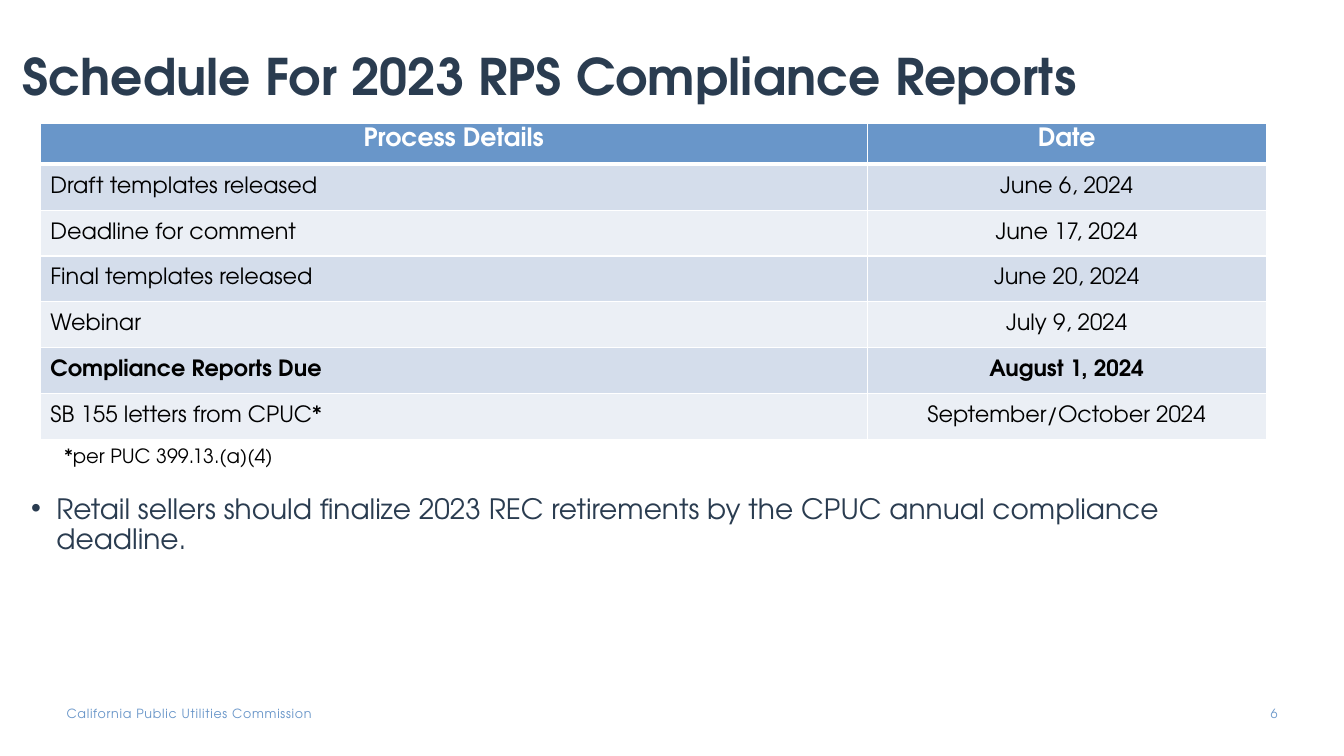
"""Build the slide with the schedule for the 2023 RPS compliance reports."""
from dataclasses import dataclass

from lxml.etree import SubElement
from pptx import Presentation
from pptx.dml.color import RGBColor
from pptx.enum.text import MSO_ANCHOR as Anchor, PP_ALIGN as Align
from pptx.oxml import parse_xml
from pptx.oxml.ns import nsdecls, qn
from pptx.util import Emu, Pt

EMU_PER_PX = 9144
FONT = "TeX Gyre Adventor"
COLORS = {
    "navy": "2A3C50",
    "blue": "6996C9",
    "band": "D4DDEB",
    "pale": "EBEFF5",
    "white": "FFFFFF",
    "black": "000000",
}


@dataclass(frozen=True)
class Style:
    size: int
    color: str
    bold: bool = False
    align: Align = Align.LEFT
    spacing: float = 1.0
    tracking: int = 0


@dataclass(frozen=True)
class TextItem:
    text: str
    left: int
    top: int
    width: int
    height: int
    style: Style
    insets: tuple[int, int, int, int] = (0, 0, 0, 0)
    anchor: Anchor = Anchor.TOP
    wrap: bool = True
    bullet: bool = False


@dataclass(frozen=True)
class Step:
    detail: str
    date: str
    bold: bool = False


BLOCK_INSETS = (0, 5, 10, 5)
TEXTS = [
    TextItem("California Public Utilities Commission", 66, 700, 321, 15,
             Style(9, "blue", tracking=50)),
    TextItem("Schedule For 2023 RPS Compliance Reports", 22, 38, 1311, 72,
             Style(36, "navy", bold=True, spacing=0.9), BLOCK_INSETS, Anchor.BOTTOM),
    TextItem("6", 1225, 700, 42, 20, Style(9, "blue", align=Align.RIGHT)),
    TextItem("*per PUC 399.13.(a)(4)", 54, 435, 230, 34, Style(14, "black"),
             (10, 5, 10, 5), wrap=False),
    TextItem("Retail sellers should finalize 2023 REC retirements by the CPUC "
             "annual compliance deadline.", 31, 486, 1216, 200,
             Style(20, "navy", spacing=0.9), BLOCK_INSETS, bullet=True),
]
STEPS = [
    Step("Process Details", "Date", bold=True),
    Step("Draft templates released", "June 6, 2024"),
    Step("Deadline for comment", "June 17, 2024"),
    Step("Final templates released", "June 20, 2024"),
    Step("Webinar", "July 9, 2024"),
    Step("Compliance Reports Due", "August 1, 2024", bold=True),
    Step("SB 155 letters from CPUC*", "September/October 2024"),
]
COLUMN_WIDTHS = (820, 396)
TABLE_LEFT, TABLE_TOP, TABLE_HEIGHT, HEADER_HEIGHT = 40, 122, 314, 41


def px(length: float) -> Emu:
    return Emu(round(length * EMU_PER_PX))


def rgb(name: str) -> RGBColor:
    return RGBColor.from_string(COLORS[name])


def write_line(para, text: str, style: Style) -> None:
    para.text = text
    para.alignment = style.align
    para.line_spacing = style.spacing
    span = para.runs[0]
    span.font.name = FONT
    span.font.size = Pt(style.size)
    span.font.bold = style.bold
    span.font.color.rgb = rgb(style.color)
    if style.tracking:
        span._r.get_or_add_rPr().set("spc", str(style.tracking))


def add_bullet(para) -> None:
    properties = para._p.get_or_add_pPr()
    properties.set("marL", str(px(25)))
    properties.set("indent", str(px(-25)))
    SubElement(properties, qn("a:buFont"), typeface="Arial")
    SubElement(properties, qn("a:buChar"), char="•")


def add_text(page, item: TextItem) -> None:
    box = page.shapes.add_textbox(px(item.left), px(item.top), px(item.width), px(item.height))
    frame = box.text_frame
    frame.word_wrap = item.wrap
    frame.vertical_anchor = item.anchor
    (frame.margin_left, frame.margin_top,
     frame.margin_right, frame.margin_bottom) = map(px, item.insets)
    para = frame.paragraphs[0]
    if item.bullet:
        add_bullet(para)
    write_line(para, item.text, item.style)


def add_borders(cell, top: int, bottom: int) -> None:
    properties = cell._tc.get_or_add_tcPr()
    sides = {"lnL": 1, "lnR": 1, "lnT": top, "lnB": bottom}
    for index, (side, width) in enumerate(sides.items()):
        properties.insert(index, parse_xml(
            f'<a:{side} {nsdecls("a")} w="{Pt(width)}"><a:solidFill>'
            f'<a:srgbClr val="{COLORS["white"]}"/></a:solidFill></a:{side}>'))


def add_schedule(page, steps: list[Step]) -> None:
    row_height = (TABLE_HEIGHT - HEADER_HEIGHT) / (len(steps) - 1)
    table = page.shapes.add_table(
        len(steps), len(COLUMN_WIDTHS), px(TABLE_LEFT), px(TABLE_TOP),
        px(sum(COLUMN_WIDTHS)), px(TABLE_HEIGHT)).table
    for column, width in zip(table.columns, COLUMN_WIDTHS):
        column.width = px(width)
    for number, step in enumerate(steps):
        header = number == 0
        table.rows[number].height = px(HEADER_HEIGHT if header else row_height)
        fill = "blue" if header else ("pale", "band")[number % 2]
        for index, text in enumerate((step.detail, step.date)):
            cell = table.cell(number, index)
            cell.fill.solid()
            cell.fill.fore_color.rgb = rgb(fill)
            cell.vertical_anchor = Anchor.TOP if header else Anchor.MIDDLE
            add_borders(cell, 3 if number == 1 else 1, 3 if header else 1)
            write_line(cell.text_frame.paragraphs[0], text, Style(
                18 if header else 16, "white" if header else "black", step.bold,
                Align.CENTER if header or index else Align.LEFT))


def main() -> None:
    deck = Presentation()
    deck.slide_width, deck.slide_height = px(1333), px(750)
    page = deck.slides.add_slide(deck.slide_layouts[6])
    add_schedule(page, STEPS)
    for item in TEXTS:
        add_text(page, item)
    deck.save("out.pptx")


if __name__ == "__main__":
    main()
